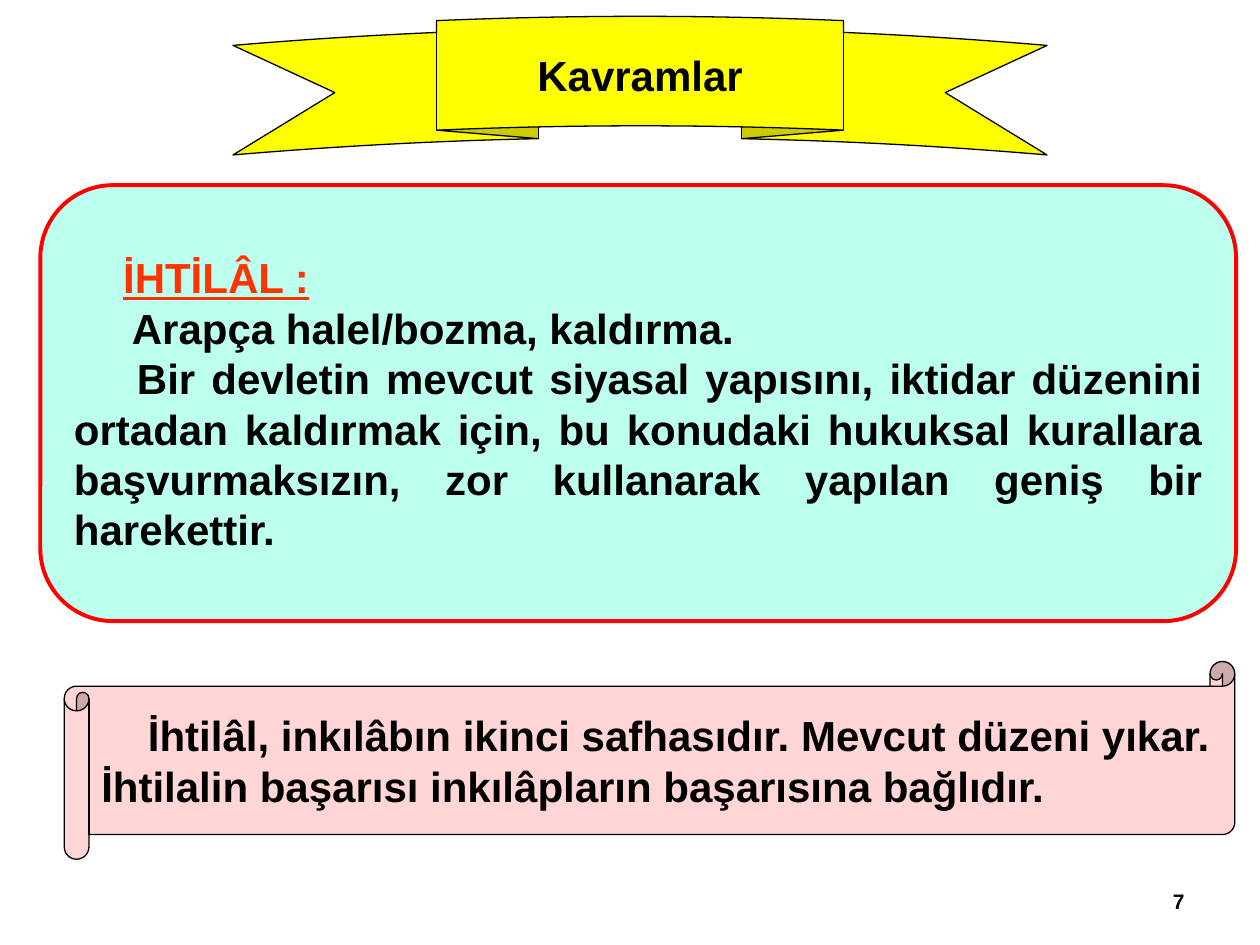
from dataclasses import dataclass

from pptx import Presentation
from pptx.dml.color import RGBColor as RGB
from pptx.enum.shapes import MSO_SHAPE as SHAPE
from pptx.enum.text import MSO_ANCHOR as ANCHOR, PP_ALIGN as ALIGN
from pptx.util import Inches, Pt


@dataclass(frozen=True)
class Theme:
    font: str = "Arial"
    text: RGB = RGB(0x00, 0x00, 0x00)
    term: RGB = RGB(0xFF, 0x33, 0x00)
    border: RGB = RGB(0xFF, 0x00, 0x00)
    definition: RGB = RGB(0xBD, 0xFF, 0xEE)
    scroll: RGB = RGB(0xFF, 0xD5, 0xD6)
    ribbon: RGB = RGB(0xFF, 0xFF, 0x00)
    body_size: Pt = Pt(24)
    number_size: Pt = Pt(12)


THEME = Theme()


def add_panel(s, kind, box, fill, line=THEME.text, width=0.75, adjustments=()):
    """Add a filled, outlined preset shape."""
    sp = s.shapes.add_shape(kind, *map(Inches, box))
    sp.shadow.inherit = False
    sp.fill.solid()
    sp.fill.fore_color.rgb = fill
    sp.line.color.rgb = line
    sp.line.width = Pt(width)
    for i, value in enumerate(adjustments):
        sp.adjustments[i] = value
    return sp


def write_paragraph(p, text, align, indent=0, size=THEME.body_size,
                    color=THEME.text, underline=False):
    """Write one bold paragraph with an optional first-line indent."""
    p.text = text
    p.alignment = align
    if indent:
        p._p.get_or_add_pPr().set("indent", str(Inches(indent)))
    for r in p.runs:
        r.font.name = THEME.font
        r.font.size = size
        r.font.bold = True
        r.font.underline = underline
        r.font.color.rgb = color


def write_text(sp, *paragraphs):
    """Fill a shape with paragraphs given as keyword sets."""
    tf = sp.text_frame
    tf.word_wrap = True
    tf.vertical_anchor = ANCHOR.MIDDLE
    for i, options in enumerate(paragraphs):
        p = tf.add_paragraph() if i else tf.paragraphs[0]
        write_paragraph(p, **options)


def add_title(s, text):
    """Set the title on the face of a curved ribbon."""
    add_panel(s, SHAPE.CURVED_UP_RIBBON, (1.85, 0.13, 6.46, 1.1), THEME.ribbon,
              adjustments=(0.21, 0.5, 0.125))
    title = s.shapes.title
    title.left, title.top, title.width, title.height = map(
        Inches, (3.48, 0.16, 3.2, 0.87))
    write_text(title, dict(text=text, align=ALIGN.CENTER))
    s.shapes._spTree.append(title._element)  # bring in front of the ribbon


def add_page_number(s, number):
    sp = s.shapes.add_textbox(*map(Inches, (7.17, 6.95, 2.33, 0.4)))
    write_text(sp, dict(text=number, align=ALIGN.RIGHT, size=THEME.number_size))


def main():
    prs = Presentation()
    prs.slide_width, prs.slide_height = Inches(10), Inches(7.5)
    s = prs.slides.add_slide(prs.slide_layouts[5])

    add_page_number(s, "7")

    # Term and its definition
    definition = add_panel(s, SHAPE.FLOWCHART_ALTERNATE_PROCESS,
                           (0.32, 1.47, 9.49, 3.46), THEME.definition,
                           THEME.border, 2.25)
    write_text(
        definition,
        dict(text="İHTİLÂL :", align=ALIGN.LEFT, indent=0.39,
             color=THEME.term, underline=True),
        dict(text="Arapça halel/bozma, kaldırma.", align=ALIGN.JUSTIFY, indent=0.46),
        dict(text="Bir devletin mevcut siyasal yapısını, iktidar düzenini ortadan "
                  "kaldırmak için, bu konudaki hukuksal kurallara başvurmaksızın, "
                  "zor kullanarak yapılan geniş bir harekettir.",
             align=ALIGN.JUSTIFY, indent=0.5),
    )

    # Closing remark
    remark = add_panel(s, SHAPE.HORIZONTAL_SCROLL, (0.51, 5.25, 9.29, 1.57),
                       THEME.scroll, adjustments=(0.125,))
    write_text(remark, dict(
        text="İhtilâl, inkılâbın ikinci safhasıdır. Mevcut düzeni yıkar. "
             "İhtilalin başarısı inkılâpların başarısına bağlıdır.",
        align=ALIGN.JUSTIFY, indent=0.37))

    add_title(s, "Kavramlar")
    prs.save("out.pptx")


if __name__ == "__main__":
    main()
